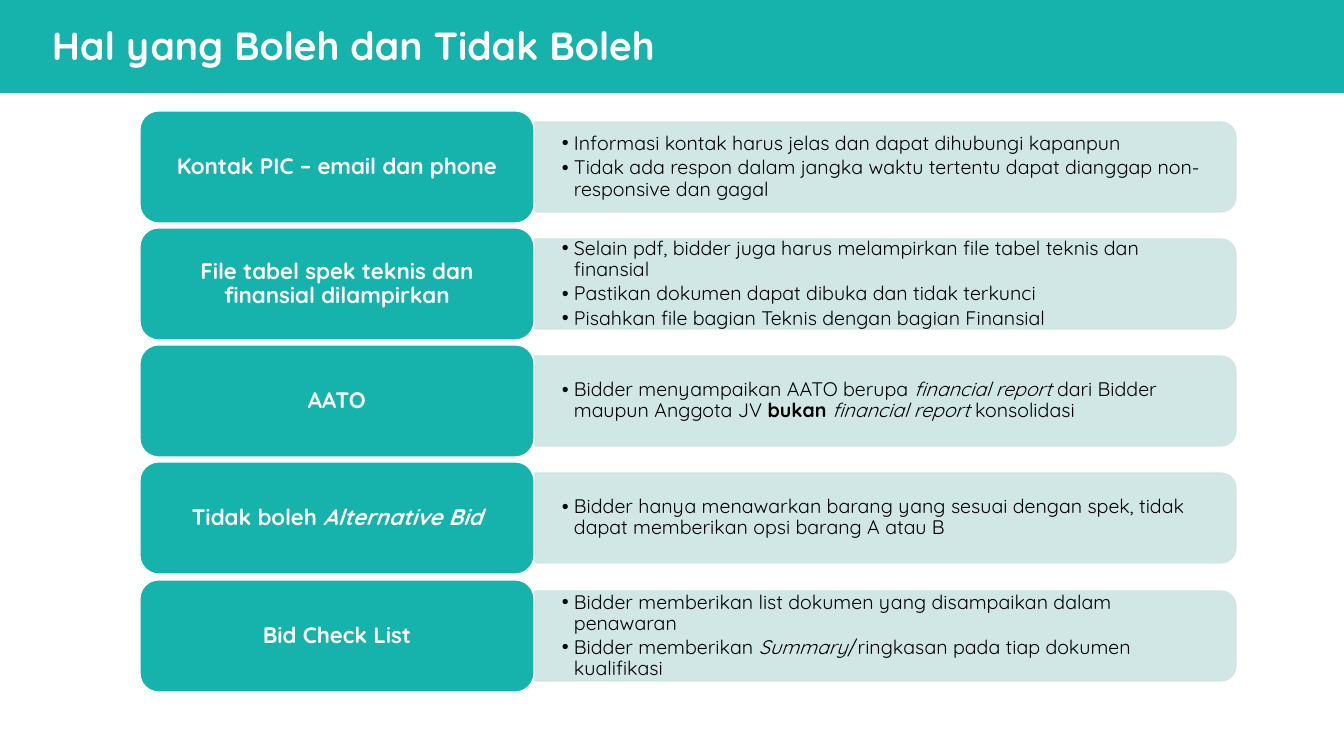
from lxml.etree import SubElement
from pptx import Presentation
from pptx.dml.color import RGBColor
from pptx.enum.shapes import MSO_SHAPE
from pptx.enum.text import MSO_ANCHOR, MSO_AUTO_SIZE, PP_ALIGN
from pptx.oxml.ns import qn
from pptx.util import Pt

SCALE = 914400 / 100.8
FONT = "Quicksand"
TEAL, PALE, WHITE, BLACK = "16B3AC", "CCE5E3", "FFFFFF", "000000"

# Each row: label, then its bullets; a part is plain text or (text, style)
ROWS = [
    (["Kontak PIC – email dan phone"],
     [["Informasi kontak harus jelas dan dapat dihubungi kapanpun"],
      ["Tidak ada respon dalam jangka waktu tertentu dapat dianggap "
       "non-responsive dan gagal"]]),
    (["File tabel spek teknis dan finansial dilampirkan"],
     [["Selain pdf, bidder juga harus melampirkan file tabel teknis "
       "dan finansial"],
      ["Pastikan dokumen dapat dibuka dan tidak terkunci"],
      ["Pisahkan file bagian Teknis dengan bagian Finansial"]]),
    (["AATO"],
     [["Bidder menyampaikan AATO berupa ", ("financial report ", "i"),
       "dari Bidder maupun Anggota JV ", ("bukan ", "b"),
       ("financial report ", "i"), "konsolidasi"]]),
    (["Tidak boleh ", ("Alternative Bid", "i")],
     [["Bidder hanya menawarkan barang yang sesuai dengan spek, tidak "
       "dapat memberikan opsi barang A atau B"]]),
    (["Bid Check List"],
     [["Bidder memberikan list dokumen yang disampaikan dalam penawaran"],
      ["Bidder memberikan ", ("Summary", "i"),
       "/ringkasan pada tiap dokumen kualifikasi"]]),
]


def px(num):
    return round(num * SCALE)


def color(code):
    return RGBColor.from_string(code)


def place(shape, left, top, width, height):
    shape.left, shape.top = px(left), px(top)
    shape.width, shape.height = px(width), px(height)


def add_bullet(para):
    props = para._p.get_or_add_pPr()
    props.set("marL", str(px(12)))
    props.set("indent", str(-px(12)))
    SubElement(props, qn("a:buChar")).set("char", "•")


def write(shape, paras, size=14, fill=BLACK, bold=False, align=PP_ALIGN.LEFT,
          anchor=MSO_ANCHOR.MIDDLE, inset=(0, 0), wrap=True, bullet=False):
    frame = shape.text_frame
    frame.auto_size = MSO_AUTO_SIZE.NONE
    frame.word_wrap = wrap
    frame.vertical_anchor = anchor
    frame.margin_left = frame.margin_right = px(inset[0])
    frame.margin_top = frame.margin_bottom = px(inset[1])
    for num, parts in enumerate(paras):
        para = frame.add_paragraph() if num else frame.paragraphs[0]
        if bullet:
            add_bullet(para)
        para.alignment = align
        para.line_spacing = 0.9
        para.space_before = Pt(0)
        para.space_after = Pt(2.1 if bullet else 0)
        for part in parts:
            text, style = (part, "") if isinstance(part, str) else part
            run = para.add_run()
            run.text = text
            font = run.font
            font.name, font.size = FONT, Pt(size)
            font.bold = bold or style == "b"
            font.italic = style == "i"
            font.color.rgb = color(fill)


def add_box(shapes, kind, box, fill, line=None):
    shape = shapes.add_shape(kind, 0, 0, 0, 0)
    place(shape, *box)
    shape.shadow.inherit = False
    shape.fill.solid()
    shape.fill.fore_color.rgb = color(fill)
    if line:
        shape.line.color.rgb = color(line)
        shape.line.width = Pt(0.85)
    else:
        shape.line.fill.background()
    return shape


def add_panel(shapes, left, top, width, height):
    # A quarter turn swaps the sides around the same centre
    shift = (width - height) / 2
    box = (left + shift, top - shift, height, width)
    panel = add_box(shapes, MSO_SHAPE.ROUND_2_SAME_RECTANGLE, box, PALE, PALE)
    panel.rotation = 90
    for tint in panel.element.spPr.iter(qn("a:srgbClr")):
        SubElement(tint, qn("a:alpha")).set("val", "90000")


def add_row(shapes, body, top, label, points):
    add_panel(shapes, 535, top + 11, 701, 90)
    # Bullets lie over the panel
    shapes.element.append(body.element)
    place(body, 535, top + 16, 697, 80)
    write(body, points, inset=(27, 14), bullet=True)
    # Label
    box = add_box(shapes, MSO_SHAPE.ROUNDED_RECTANGLE, (140, top, 394, 112),
                  TEAL, WHITE)
    write(box, [label], size=16, fill=WHITE, bold=True,
          align=PP_ALIGN.CENTER, inset=(7, 3))


def main():
    deck = Presentation()
    deck.slide_width, deck.slide_height = px(1344), px(756)
    layout = deck.slide_layouts[1]
    slide = deck.slides.add_slide(layout)
    shapes = slide.shapes
    title, body = shapes.title, slide.placeholders[1]

    # Header band and title
    add_box(shapes, MSO_SHAPE.RECTANGLE, (0, 0, 1344, 93), TEAL)
    shapes.element.append(title.element)
    place(title, 52, 27, 1100, 35)
    write(title, [["Hal yang Boleh dan Tidak Boleh"]], size=28, fill=WHITE,
          bold=True, anchor=MSO_ANCHOR.TOP, wrap=False)

    # Rows, with one body placeholder each
    for num, (label, points) in enumerate(ROWS):
        if num:
            shapes.clone_placeholder(layout.placeholders[1])
            body = shapes[-1]
        add_row(shapes, body, 111 + num * 469 // 4, label, points)

    deck.save("out.pptx")


if __name__ == "__main__":
    main()
